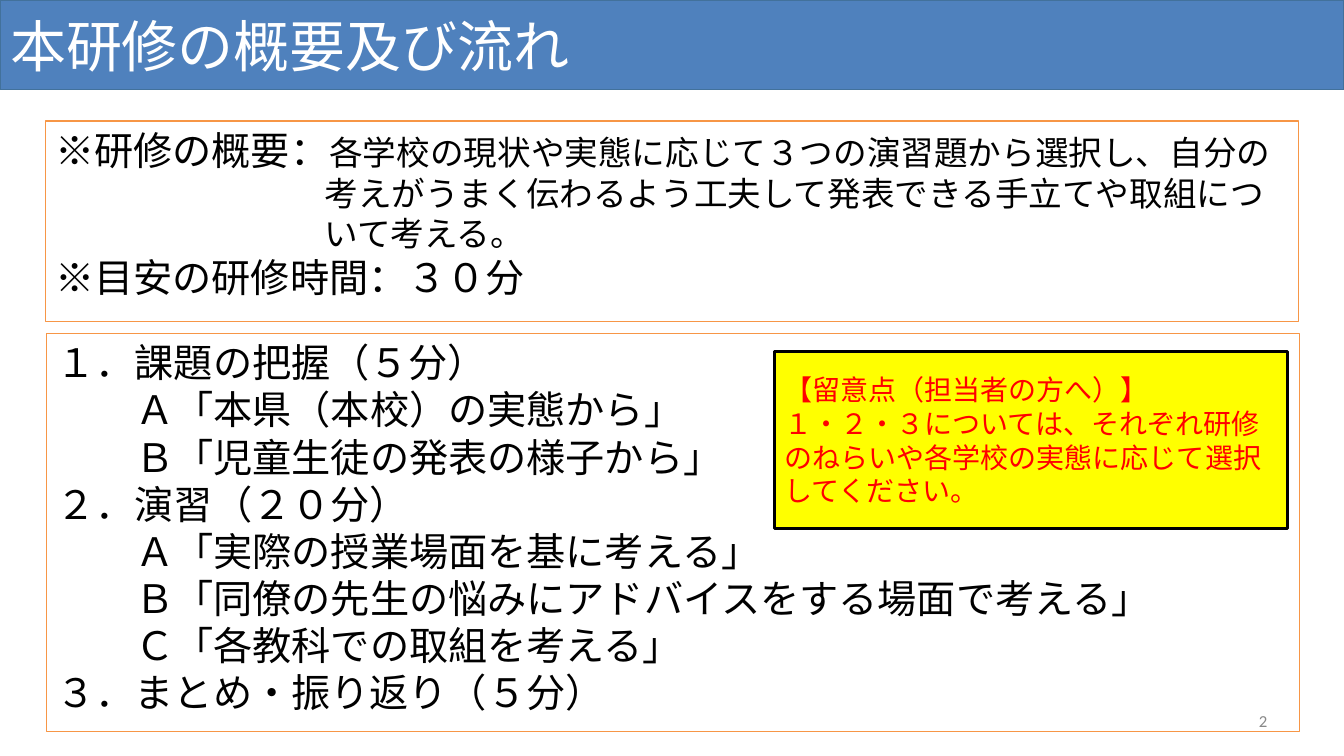
from lxml import etree
from pptx import Presentation
from pptx.dml.color import RGBColor
from pptx.enum.shapes import MSO_SHAPE
from pptx.enum.text import MSO_ANCHOR, MSO_AUTO_SIZE, PP_ALIGN
from pptx.oxml.ns import qn
from pptx.util import Inches, Pt

RECTANGLE = MSO_SHAPE.RECTANGLE
TOP, MIDDLE = MSO_ANCHOR.TOP, MSO_ANCHOR.MIDDLE
LEFT, RIGHT = PP_ALIGN.LEFT, PP_ALIGN.RIGHT
NO_AUTOFIT = MSO_AUTO_SIZE.NONE
JAPANESE, LATIN = "Noto Sans CJK JP", "Calibri"


def rgb(color):
    return RGBColor.from_string(color)


def write_paragraphs(shape, paragraphs, font, color, anchor=TOP, align=LEFT):
    """Fill a shape from (left margin, first-line indent, [(text, size), ...]) rows."""
    frame = shape.text_frame
    frame_format = {"word_wrap": True, "auto_size": NO_AUTOFIT, "vertical_anchor": anchor,
                    "margin_left": Inches(0.1), "margin_right": Inches(0.1),
                    "margin_top": Inches(0.05), "margin_bottom": Inches(0.05)}
    for name, value in frame_format.items():
        setattr(frame, name, value)
    for index, (margin, indent, runs) in enumerate(paragraphs):
        paragraph = frame.add_paragraph() if index else frame.paragraphs[0]
        paragraph_format = {"alignment": align, "space_before": Pt(0), "space_after": Pt(0)}
        for name, value in paragraph_format.items():
            setattr(paragraph, name, value)
        properties = paragraph._p.get_or_add_pPr()
        properties.set("marL", str(Inches(margin)))
        properties.set("indent", str(Inches(indent)))
        etree.SubElement(properties, qn("a:buNone"))
        for text, size in runs:
            run = paragraph.add_run()
            run.text = text
            run.font.name = font
            run.font.size = Pt(size)
            run.font.color.rgb = rgb(color)
            east_asian = etree.SubElement(run._r.get_or_add_rPr(), qn("a:ea"))
            east_asian.set("typeface", font)


presentation = Presentation()
presentation.slide_width = Inches(13.33)
presentation.slide_height = Inches(7.5)
slide = presentation.slides.add_slide(presentation.slide_layouts[1])

title = slide.shapes.title
agenda = slide.placeholders[1]
overview = slide.shapes.add_shape(RECTANGLE, 0, 0, 0, 0)
notice = slide.shapes.add_shape(RECTANGLE, 0, 0, 0, 0)
for shape in (overview, notice):
    shape.shadow.inherit = False

boxes = [
    (title, (0, 0, 13.33, 0.89), "4F81BD", "42719B", 1),
    (agenda, (0.46, 3.31, 12.43, 3.95), "FFFFFF", "F79646", 1),
    (overview, (0.45, 1.2, 12.43, 1.99), "FFFFFF", "F79646", 1),
    (notice, (7.68, 3.49, 5.09, 1.75), "FFFF00", "000000", 2),
]
for shape, position, fill, line, width in boxes:
    for name, value in zip(("left", "top", "width", "height"), position):
        setattr(shape, name, Inches(value))
    shape.fill.solid()
    shape.fill.fore_color.rgb = rgb(fill)
    shape.line.color.rgb = rgb(line)
    shape.line.width = Pt(width)

write_paragraphs(title, [(0, 0, [("本研修の概要及び流れ", 40)])], JAPANESE, "FFFFFF", MIDDLE)

agenda_items = [
    (0, "１．課題の把握（５分）"),
    (1, "Ａ「本県（本校）の実態から」"),
    (1, "Ｂ「児童生徒の発表の様子から」"),
    (0, "２．演習（２０分）"),
    (1, "Ａ「実際の授業場面を基に考える」"),
    (1, "Ｂ「同僚の先生の悩みにアドバイスをする場面で考える」"),
    (1, "Ｃ「各教科での取組を考える」"),
    (0, "３．まとめ・振り返り（５分）"),
]
write_paragraphs(agenda, [(0.78 * level, 0, [(text, 28)]) for level, text in agenda_items],
                 JAPANESE, "000000")

summary = ("各学校の現状や実態に応じて３つの演習題から選択し、自分の"
           "考えがうまく伝わるよう工夫して発表できる手立てや取組について考える。")
write_paragraphs(overview, [
    (2.67, -2.67, [("※研修の概要：", 28), (summary, 24)]),
    (0, 0, [("※目安の研修時間：３０分", 28)]),
], JAPANESE, "000000")

notice_lines = [
    "【留意点（担当者の方へ）】",
    "１・２・３については、それぞれ研修のねらいや各学校の実態に応じて選択してください。",
]
write_paragraphs(notice, [(0, 0, [(text, 20)]) for text in notice_lines],
                 LATIN, "FF0000", MIDDLE)

page_number = slide.shapes.add_textbox(Inches(9.56), Inches(6.95), Inches(3.11), Inches(0.4))
write_paragraphs(page_number, [(0, 0, [("2", 12)])], LATIN, "888888", MIDDLE, RIGHT)

presentation.save("out.pptx")
